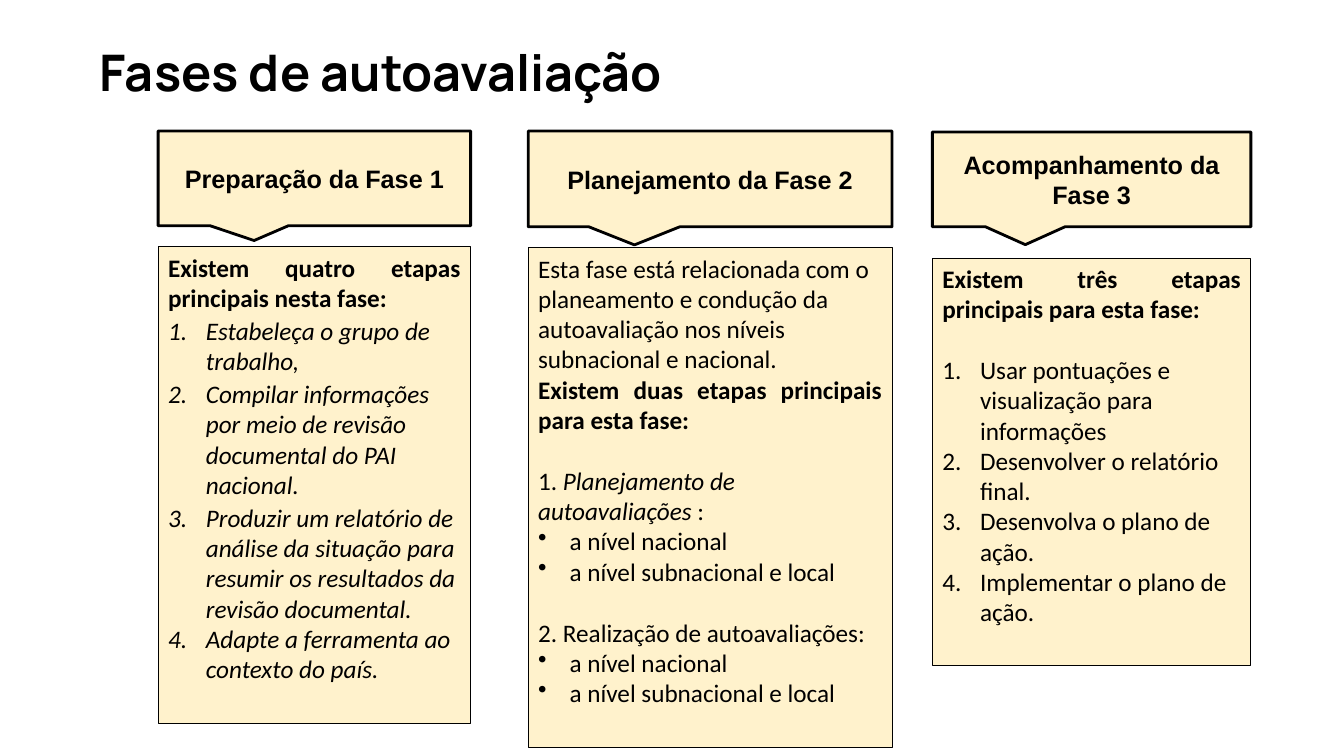
from lxml import etree
from pptx import Presentation
from pptx.dml.color import RGBColor
from pptx.enum import shapes, text
from pptx.oxml import ns
from pptx.util import Pt

COLORS = {"ink": "000000", "cream": "FFF2CC"}
BLANK_LINE = 22
NUMBER_INDENT = 27
BULLET_INDENT = 22.5
JUSTIFY = text.PP_ALIGN.JUSTIFY
NUMBERED = ("buAutoNum", "type", "arabicPeriod", NUMBER_INDENT)
BULLETED = ("buChar", "char", "•", BULLET_INDENT)

# Each paragraph: its text, or (text, italic) pairs, then its formatting
PREPARATION = [
    ("Existem quatro etapas principais nesta fase:", dict(bold=True, align=JUSTIFY)),
    ("Estabeleça o grupo de trabalho,", dict(marker=NUMBERED, italic=True, before=2)),
    ("Compilar informações por meio de revisão documental do PAI nacional.",
     dict(marker=NUMBERED, italic=True, before=2)),
    ("Produzir um relatório de análise da situação para resumir os resultados "
     "da revisão documental.", dict(marker=NUMBERED, italic=True, before=2)),
    ("Adapte a ferramenta ao contexto do país.", dict(marker=NUMBERED, italic=True)),
]
LEVELS = [
    ("a nível nacional", dict(marker=BULLETED)),
    ("a nível subnacional e local", dict(marker=BULLETED)),
]
PLANNING = [
    ("Esta fase está relacionada com o planeamento e condução da autoavaliação "
     "nos níveis subnacional e nacional.", {}),
    ("Existem duas etapas principais para esta fase:", dict(bold=True, align=JUSTIFY)),
    ([("1. ", False), ("Planejamento de autoavaliações ", True), (":", False)],
     dict(before=BLANK_LINE)),
    *LEVELS,
    ("2. Realização de autoavaliações:", dict(before=BLANK_LINE)),
    *LEVELS,
]
FOLLOW_UP = [
    ("Existem três etapas principais para esta fase:", dict(bold=True, align=JUSTIFY)),
    ("Usar pontuações e visualização para informações",
     dict(marker=NUMBERED, before=BLANK_LINE)),
    ("Desenvolver o relatório final.", dict(marker=NUMBERED)),
    ("Desenvolva o plano de ação.", dict(marker=NUMBERED)),
    ("Implementar o plano de ação.", dict(marker=NUMBERED)),
]

# Left, width, callout (top, height, pointer), body (top, height), heading, steps
PHASES = [
    (113, 223.2, (93.6, 67.7, (-0.193, 0.656)), (176.4, 340.6),
     "Preparação da Fase 1", PREPARATION),
    (377.3, 259.9, (93.6, 68.4, (-0.208, 0.689)), (177.1, 357.1),
     "Planejamento da Fase 2", PLANNING),
    (666, 227.5, (94.3, 67.7, (-0.208, 0.689)), (184.5, 290.9),
     "Acompanhamento da Fase 3", FOLLOW_UP),
]


def color(name):
    return RGBColor.from_string(COLORS[name])


def set_font(font, name, size, bold=False):
    font.name = name
    font.size = Pt(size)
    font.bold = bold
    font.color.rgb = color("ink")


def add_marker(para, marker):
    tag, attribute, value, indent = marker
    properties = para._p.get_or_add_pPr()
    properties.set("marL", str(Pt(indent)))
    properties.set("indent", str(-Pt(indent)))
    etree.SubElement(properties, ns.qn("a:" + tag)).set(attribute, value)


def fill_paragraph(para, content, marker=None, italic=False, bold=False,
                   before=0, align=text.PP_ALIGN.LEFT):
    para.alignment = align
    if marker:
        add_marker(para, marker)
    if before:
        para.space_before = Pt(before)
    set_font(para.font, "Calibri", 18, bold)
    if isinstance(content, str):
        para.font.italic = italic
        para.add_run().text = content
    else:
        for words, slanted in content:
            span = para.add_run()
            span.text = words
            span.font.italic = slanted


def add_panel(page, kind, left, top, width, height, line_width, anchor):
    panel = page.shapes.add_shape(kind, Pt(left), Pt(top), Pt(width), Pt(height))
    panel.shadow.inherit = False
    panel.fill.solid()
    panel.fill.fore_color.rgb = color("cream")
    panel.line.color.rgb = color("ink")
    panel.line.width = Pt(line_width)
    panel.text_frame.word_wrap = True
    panel.text_frame.vertical_anchor = anchor
    return panel


def add_callout(page, left, top, width, height, pointer, heading):
    callout = add_panel(page, shapes.MSO_SHAPE.RECTANGULAR_CALLOUT, left, top,
                        width, height, 2, text.MSO_ANCHOR.MIDDLE)
    callout.adjustments[0], callout.adjustments[1] = pointer
    para = callout.text_frame.paragraphs[0]
    para.alignment = text.PP_ALIGN.CENTER
    set_font(para.font, "Arial", 18, bold=True)
    para.add_run().text = heading


def add_body(page, left, top, width, height, steps):
    frame = add_panel(page, shapes.MSO_SHAPE.RECTANGLE, left, top, width, height,
                      0.75, text.MSO_ANCHOR.TOP).text_frame
    for index, (content, style) in enumerate(steps):
        para = frame.add_paragraph() if index else frame.paragraphs[0]
        fill_paragraph(para, content, **style)


def add_title(page, words):
    box = page.shapes.add_textbox(Pt(66.2), Pt(28.8), Pt(864.7), Pt(49.7))
    frame = box.text_frame
    frame.word_wrap = True
    frame.vertical_anchor = text.MSO_ANCHOR.MIDDLE
    frame.margin_left = frame.margin_right = Pt(5)
    frame.margin_top = frame.margin_bottom = Pt(3)
    para = frame.paragraphs[0]
    para.line_spacing = 0.9
    set_font(para.font, "Manrope", 36, bold=True)
    para.add_run().text = words


def main():
    deck = Presentation()
    deck.slide_width, deck.slide_height = Pt(960), Pt(540)
    page = deck.slides.add_slide(deck.slide_layouts[6])

    add_title(page, "Fases de autoavaliação")

    # One column per phase: steps below, callout heading above
    for left, width, callout, body, heading, steps in PHASES:
        body_top, body_height = body
        add_body(page, left, body_top, width, body_height, steps)
        top, height, pointer = callout
        add_callout(page, left, top, width, height, pointer, heading)

    deck.save("out.pptx")


if __name__ == "__main__":
    main()
